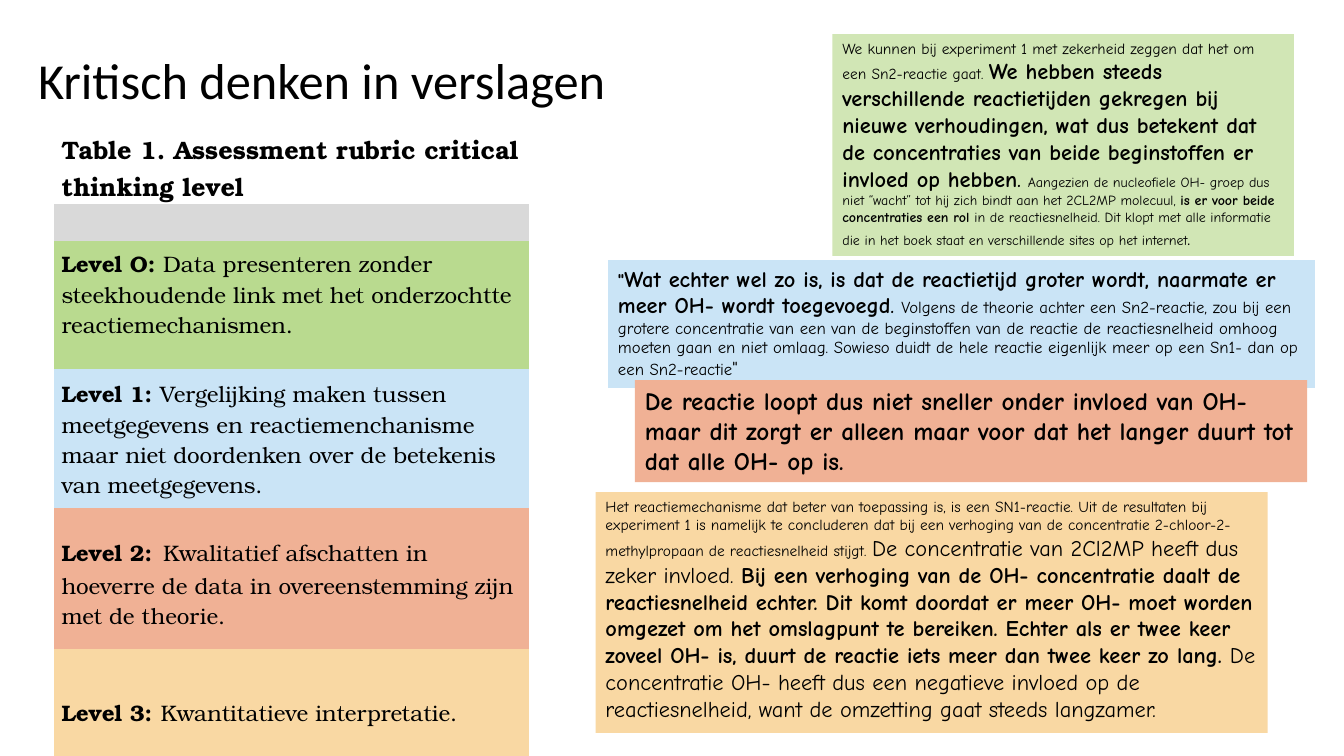
from dataclasses import dataclass

from pptx import Presentation
from pptx.dml.color import RGBColor
from pptx.enum.shapes import MSO_SHAPE as SHAPE
from pptx.enum.text import MSO_ANCHOR as ANCHOR, MSO_AUTO_SIZE as AUTO, PP_ALIGN as ALIGN
from pptx.oxml.ns import qn
from pptx.util import Cm, Pt


@dataclass(frozen=True)
class Theme:
    text: str = "000000"
    grey: str = "D9D9D9"
    green: str = "B9DA8F"
    light_green: str = "D1E6B5"
    blue: str = "CAE4F6"
    red: str = "F0B195"
    orange: str = "F9D8A3"
    title_font: str = "Calibri"
    rubric_font: str = "TeX Gyre Bonum"
    spacer_font: str = "Times New Roman"
    quote_font: str = "Comic Neue"
    title: int = 36
    spacer: int = 24
    large: int = 18
    body: int = 16
    medium: int = 14
    small: int = 12
    fine: int = 11
    tiny: int = 10


T = Theme()
PLAIN_TABLE = "{2D5ABB26-0587-4C30-8999-92F81FD0307C}"


def add_run(p, text, size=T.body, bold=False, font=T.quote_font):
    r = p.add_run()
    r.text = text
    r.font.size = Pt(size)
    r.font.bold = bold
    r.font.name = font
    r.font.color.rgb = RGBColor.from_string(T.text)


def paint(item, color):
    item.fill.solid()
    item.fill.fore_color.rgb = RGBColor.from_string(color)


def add_title(s, box, text):
    tf = s.shapes.add_textbox(*map(Cm, box)).text_frame
    tf.word_wrap = True
    tf.vertical_anchor = ANCHOR.MIDDLE
    p = tf.paragraphs[0]
    p.line_spacing = 0.9
    add_run(p, text, T.title, font=T.title_font)


def add_plain_table(s, left, top, width, heights):
    frame = s.shapes.add_table(len(heights), 1, Cm(left), Cm(top), Cm(width), Cm(sum(heights)))
    table = frame.table
    table.first_row = table.horz_banding = False
    table._tbl.tblPr.find(qn("a:tableStyleId")).text = PLAIN_TABLE
    for row, height in zip(table.rows, heights):
        row.height = Cm(height)
    return table


def add_rubric(s, left, top, width, caption, levels):
    heights = [1.85, 0.94] + [level[0] for level in levels]
    table = add_plain_table(s, left, top, width, heights)
    cells = [row.cells[0] for row in table.rows]
    for cell in cells:
        cell.margin_left = cell.margin_right = Cm(0.18)
        cell.margin_top = cell.margin_bottom = 0
    cells[0].fill.background()
    p = cells[0].text_frame.paragraphs[0]
    p.space_after = Pt(2)
    add_run(p, caption, T.large, True, T.rubric_font)
    paint(cells[1], T.grey)
    for number, (cell, level) in enumerate(zip(cells[2:], levels)):
        _, color, label, gap, text = level
        paint(cell, color)
        cell.vertical_anchor = ANCHOR.MIDDLE if number else ANCHOR.TOP
        cell.margin_top = 0 if number else Cm(0.15)
        p = cell.text_frame.paragraphs[0]
        p.space_after = Pt(2)
        add_run(p, label, T.body, True, T.rubric_font)
        add_run(p, " ", *gap)
        add_run(p, text, T.body, False, T.rubric_font)


def add_quote_table(s, box, color, runs):
    left, top, width, height = box
    cell = add_plain_table(s, left, top, width, [height]).cell(0, 0)
    paint(cell, color)
    cell.vertical_anchor = ANCHOR.MIDDLE
    for run in runs:
        add_run(cell.text_frame.paragraphs[0], *run)


def add_quote(s, box, color, runs):
    sp = s.shapes.add_shape(SHAPE.RECTANGLE, *map(Cm, box))
    sp.shadow.inherit = False
    paint(sp, color)
    sp.line.fill.background()
    tf = sp.text_frame
    tf.word_wrap = True
    tf.auto_size = AUTO.SHAPE_TO_FIT_TEXT
    tf.vertical_anchor = ANCHOR.TOP
    p = tf.paragraphs[0]
    p.alignment = ALIGN.LEFT
    for run in runs:
        add_run(p, *run)


LEVELS = [
    (3.23, T.green, "Level O:", (T.body, True, T.rubric_font),
     "Data presenteren zonder steekhoudende link met het onderzochtte reactiemechanismen."),
    (3.49, T.blue, "Level 1:", (T.body, True, T.rubric_font),
     "Vergelijking maken tussen meetgegevens en reactiemenchanisme maar niet doordenken "
     "over de betekenis van meetgegevens."),
    (3.56, T.red, "Level 2:", (T.spacer, False, T.rubric_font),
     "Kwalitatief afschatten in hoeverre de data in overeenstemming zijn met de theorie."),
    (3.1, T.orange, "Level 3:", (T.spacer, False, T.spacer_font),
     "Kwantitatieve interpretatie."),
]

CERTAINTY = [
    ("We kunnen bij experiment 1 met zekerheid zeggen dat het om een Sn2-reactie gaat. ", T.fine),
    ("We hebben steeds verschillende reactietijden gekregen bij nieuwe verhoudingen, wat dus "
     "betekent dat de concentraties van beide beginstoffen er invloed op hebben", T.body, True),
    (". ", T.medium, True),
    ("Aangezien de nucleofiele OH- groep dus niet “wacht” tot hij zich bindt aan het "
     "2CL2MP molecuul, ", T.tiny),
    ("is er voor beide concentraties een rol ", T.tiny, True),
    ("in de reactiesnelheid. Dit klopt met alle informatie die in het boek staat en "
     "verschillende sites op het internet", T.tiny),
    (".", T.medium),
]

REACTION_TIME = [
    ('"', T.medium, True),
    ("Wat echter wel zo is, is dat de reactietijd groter wordt, naarmate er meer OH- wordt "
     "toegevoegd", T.body, True),
    (". ", T.medium, True),
    ("Volgens de theorie achter een Sn2-reactie, zou bij een grotere concentratie van een van de "
     "beginstoffen van de reactie de reactiesnelheid omhoog moeten gaan en niet omlaag. Sowieso "
     "duidt de hele reactie eigenlijk meer op een Sn1- dan op een Sn2-reactie", T.small),
    ('"', T.medium),
]

MECHANISM = [
    ("Het reactiemechanisme dat beter van toepassing is, is een SN1-reactie. Uit de resultaten bij "
     "experiment 1 is namelijk te concluderen dat bij een verhoging van de concentratie "
     "2-chloor-2-methylpropaan de reactiesnelheid stijgt. ", T.fine),
    ("De concentratie van 2Cl2MP heeft dus zeker invloed. ", T.body),
    ("Bij een verhoging van de OH- concentratie daalt de reactiesnelheid echter. Dit komt doordat "
     "er meer OH- moet worden omgezet om het omslagpunt te bereiken. Echter als er twee keer "
     "zoveel OH- is, duurt de reactie iets meer dan twee keer zo lang.", T.body, True),
    (" De concentratie OH- heeft dus een negatieve invloed op de reactiesnelheid, want de "
     "omzetting gaat steeds langzamer.", T.body),
]

DURATION = [
    ("De reactie loopt dus niet sneller onder invloed van OH- maar dit zorgt er alleen maar voor "
     "dat het langer duurt tot dat alle OH- op is.", T.large, True),
]


def main():
    prs = Presentation()
    prs.slide_width, prs.slide_height = Cm(33.87), Cm(19.05)
    s = prs.slides.add_slide(prs.slide_layouts[6])
    add_title(s, (0.71, 0.25, 29.21, 3.68), "Kritisch denken in verslagen")
    add_rubric(s, 1.37, 3.28, 11.96, "Table 1. Assessment rubric critical thinking level", LEVELS)
    add_quote(s, (20.98, 0.86, 11.63, 5.59), T.light_green, CERTAINTY)
    add_quote_table(s, (15.32, 6.55, 17.83, 3.2), T.blue, REACTION_TIME)
    add_quote(s, (15.01, 12.4, 16.94, 6.07), T.orange, MECHANISM)
    add_quote(s, (16, 9.58, 16.94, 2.57), T.red, DURATION)
    prs.save("out.pptx")


if __name__ == "__main__":
    main()
